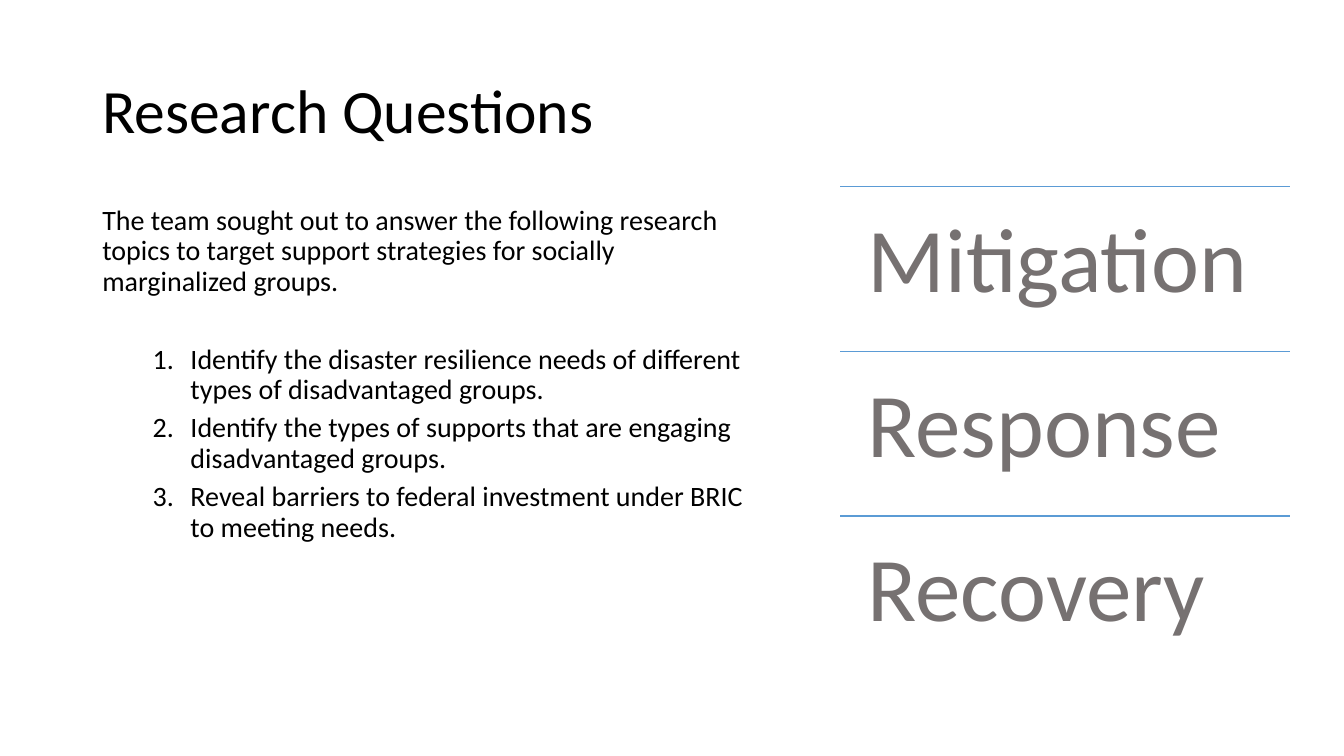
from lxml import etree
from pptx import Presentation
from pptx.dml.color import RGBColor
from pptx.enum.shapes import MSO_CONNECTOR
from pptx.enum.text import MSO_ANCHOR
from pptx.oxml.ns import qn
from pptx.util import Pt

STRAIGHT = MSO_CONNECTOR.STRAIGHT
TOP, MIDDLE = MSO_ANCHOR.TOP, MSO_ANCHOR.MIDDLE

BLACK = RGBColor(0x00, 0x00, 0x00)
GRAY = RGBColor(0x76, 0x71, 0x71)
BLUE = RGBColor(0x5B, 0x9B, 0xD5)

TITLE_FORMAT = {"name": "Calibri", "size": Pt(44), "color": BLACK}
BODY_FORMAT = {"name": "Calibri", "size": Pt(20), "color": BLACK}
PHASE_FORMAT = {"name": "Calibri", "size": Pt(65), "color": GRAY}

INTRO = ("The team sought out to answer the following research topics "
         "to target support strategies for socially marginalized groups.")
QUESTIONS = [
    "Identify the disaster resilience needs of different types of disadvantaged groups.",
    "Identify the types of supports that are engaging disadvantaged groups.",
    "Reveal barriers to federal investment under BRIC to meeting needs.",
]
PHASES = ["Mitigation", "Response", "Recovery"]

PHASE_LEFT, PHASE_TOP = 600.3, 133.4
PHASE_WIDTH, PHASE_HEIGHT = 320.9, 117.6


def add_text_frame(slide, left, top, width, height, anchor=TOP, inset=None):
    box = slide.shapes.add_textbox(Pt(left), Pt(top), Pt(width), Pt(height))
    frame = box.text_frame
    settings = {"word_wrap": True, "vertical_anchor": anchor}
    if inset is not None:
        for side in ("left", "top", "right", "bottom"):
            settings[f"margin_{side}"] = Pt(inset)
    for name, value in settings.items():
        setattr(frame, name, value)
    return frame


def write_paragraph(paragraph, text, font_format, space_after=0):
    paragraph.line_spacing = 0.9
    paragraph.space_after = Pt(space_after)
    run = paragraph.add_run()
    run.text = text
    for name, value in font_format.items():
        if name == "color":
            run.font.color.rgb = value
        else:
            setattr(run.font, name, value)


def number_paragraph(paragraph, indent, hanging):
    properties = paragraph._p.get_or_add_pPr()
    properties.set("marL", str(Pt(indent)))
    properties.set("indent", str(-Pt(hanging)))
    numbering = etree.SubElement(properties, qn("a:buAutoNum"))
    numbering.set("type", "arabicPeriod")


def add_rule(slide, left, top, width):
    rule = slide.shapes.add_connector(
        STRAIGHT, Pt(left), Pt(top), Pt(left + width), Pt(top))
    rule.line.color.rgb = BLUE
    rule.line.width = Pt(1)
    etree.SubElement(rule._element.spPr, qn("a:effectLst"))


def add_phase(slide, phase, top):
    add_rule(slide, PHASE_LEFT, top, PHASE_WIDTH)
    frame = add_text_frame(slide, PHASE_LEFT, top, PHASE_WIDTH, PHASE_HEIGHT, inset=19.5)
    write_paragraph(frame.paragraphs[0], phase, PHASE_FORMAT)


def main():
    prs = Presentation()
    prs.slide_width, prs.slide_height = Pt(960), Pt(540)
    slide = prs.slides.add_slide(prs.slide_layouts[6])

    # Title
    title = add_text_frame(slide, 66, 28.75, 828, 104.4, MIDDLE)
    write_paragraph(title.paragraphs[0], "Research Questions", TITLE_FORMAT)

    # Introduction and numbered questions
    body = add_text_frame(slide, 66, 144, 488, 343)
    write_paragraph(body.paragraphs[0], INTRO, BODY_FORMAT, space_after=34)
    for question in QUESTIONS:
        paragraph = body.add_paragraph()
        write_paragraph(paragraph, question, BODY_FORMAT, space_after=6)
        number_paragraph(paragraph, indent=63, hanging=27)

    # Disaster phases
    for row, phase in enumerate(PHASES):
        add_phase(slide, phase, PHASE_TOP + row * PHASE_HEIGHT)

    prs.save("out.pptx")


if __name__ == "__main__":
    main()
